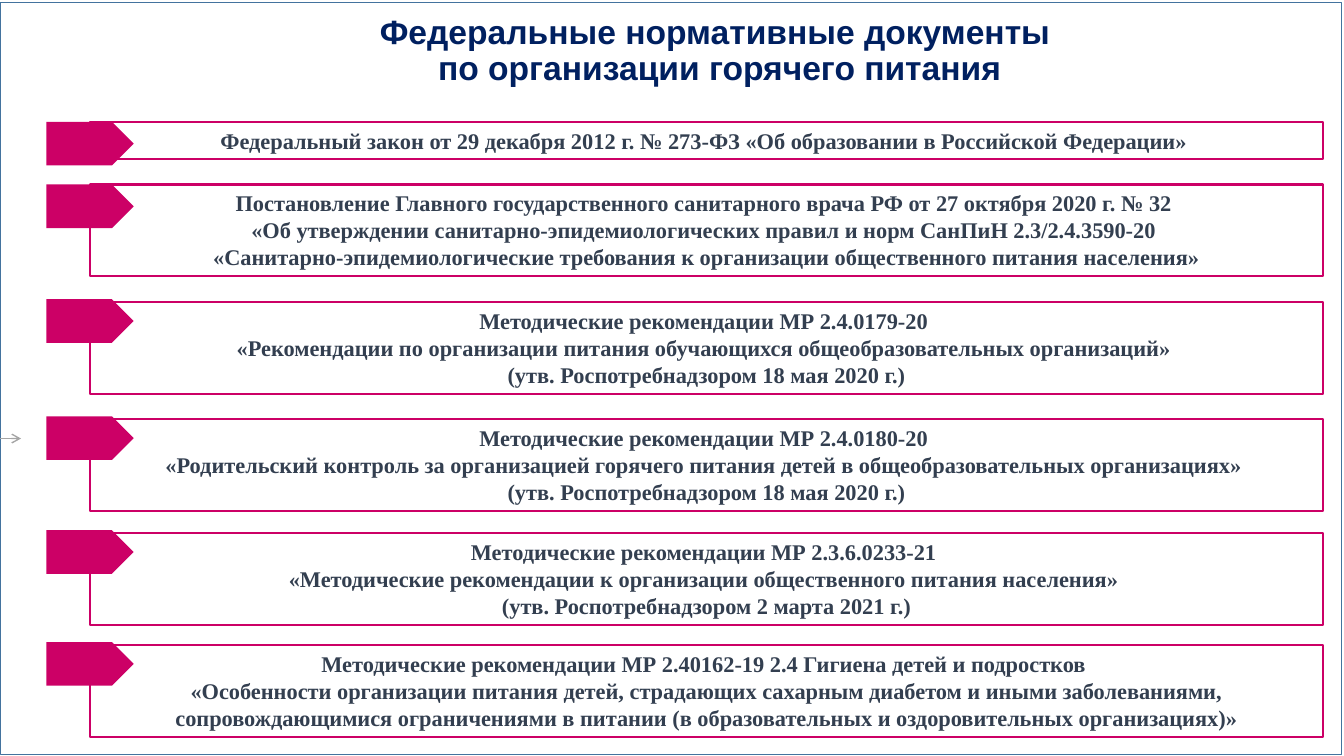
from lxml import etree
from pptx import Presentation
from pptx.dml.color import RGBColor
from pptx.enum import shapes, text
from pptx.oxml import ns
from pptx.util import Cm, Pt

COLORS = {
    "title": "002060",
    "accent": "CC0066",
    "body": "333F50",
    "frame": "43739E",
    "arrow": "A5A5A5",
}

DOCUMENTS = [
    (3.07, 0.94, 0, [
        "Федеральный закон от 29 декабря 2012 г. № 273-ФЗ «Об образовании в Российской Федерации» ",
    ]),
    (4.65, 2.31, 0, [
        "Постановление Главного государственного санитарного врача РФ от 27 октября 2020 г. № 32 ",
        "«Об утверждении санитарно-эпидемиологических правил и норм СанПиН 2.3/2.4.3590-20 ",
        "«Санитарно-эпидемиологические требования к организации общественного питания населения»",
    ]),
    (7.62, 2.31, 0.08, [
        "Методические рекомендации МР 2.4.0179-20 ",
        "«Рекомендации по организации питания обучающихся общеобразовательных организаций» ",
        "(утв. Роспотребнадзором 18 мая 2020 г.)",
    ]),
    (10.57, 2.31, 0.08, [
        "Методические рекомендации МР 2.4.0180-20 ",
        "«Родительский контроль за организацией горячего питания детей в общеобразовательных организациях» ",
        "(утв. Роспотребнадзором 18 мая 2020 г.)",
    ]),
    (13.44, 2.31, 0.08, [
        "Методические рекомендации МР 2.3.6.0233-21 ",
        "«Методические рекомендации к организации общественного питания населения» ",
        "(утв. Роспотребнадзором 2 марта 2021 г.)",
    ]),
    (16.26, 2.31, 0.08, [
        "Методические рекомендации МР 2.40162-19 2.4 Гигиена детей и подростков ",
        "«Особенности организации питания детей, страдающих сахарным диабетом и иными заболеваниями, "
        "сопровождающимися ограничениями в питании (в образовательных и оздоровительных организациях)»",
    ]),
]


def add_outline(slide, left, top, width, height, color, weight):
    shape = slide.shapes.add_shape(
        shapes.MSO_SHAPE.RECTANGLE, Cm(left), Cm(top), Cm(width), Cm(height))
    shape.shadow.inherit = False
    shape.fill.background()
    shape.line.color.rgb = RGBColor.from_string(COLORS[color])
    shape.line.width = Pt(weight)
    return shape


def format_paragraph(paragraph, font_name, size, color):
    paragraph.alignment = text.PP_ALIGN.CENTER
    paragraph.font.name = font_name
    paragraph.font.size = Pt(size)
    paragraph.font.bold = True
    paragraph.font.color.rgb = RGBColor.from_string(COLORS[color])


presentation = Presentation()
presentation.slide_width = Cm(33.87)
presentation.slide_height = Cm(19.05)
slide = presentation.slides.add_slide(presentation.slide_layouts[5])

add_outline(slide, 0, 0.05, 33.81, 18.95, "frame", 0.25)

title = slide.shapes.title
title.left, title.top, title.width, title.height = Cm(3.2), Cm(0.15), Cm(29.87), Cm(2.31)
title_frame = title.text_frame
title_frame.margin_left = title_frame.margin_right = Cm(0.1)
title_frame.margin_top = title_frame.margin_bottom = Cm(0.1)
title_frame.vertical_anchor = text.MSO_ANCHOR.MIDDLE
title_frame.word_wrap = True
title_frame.text = "Федеральные нормативные документы \vпо организации горячего питания"
title_paragraph = title_frame.paragraphs[0]
format_paragraph(title_paragraph, "Arial", 24, "title")
title_paragraph.line_spacing = 0.9

for top, height, tag_rise, lines in DOCUMENTS:
    box = add_outline(slide, 2.26, top, 31.09, height, "accent", 1.5)
    box.text_frame.word_wrap = True
    box.text_frame.auto_size = text.MSO_AUTO_SIZE.SHAPE_TO_FIT_TEXT
    box.text_frame.vertical_anchor = text.MSO_ANCHOR.TOP
    box.text_frame.text = "\n".join(lines)
    for paragraph in box.text_frame.paragraphs:
        format_paragraph(paragraph, "Times New Roman", 16, "body")

    tag = slide.shapes.add_shape(
        shapes.MSO_SHAPE.PENTAGON, Cm(1.17), Cm(top - tag_rise), Cm(2.2), Cm(1.1))
    tag.shadow.inherit = False
    tag.fill.solid()
    tag.fill.fore_color.rgb = RGBColor.from_string(COLORS["accent"])
    tag.line.fill.background()

arrow = slide.shapes.add_connector(
    shapes.MSO_CONNECTOR.STRAIGHT, Cm(0), Cm(11.05), Cm(0.53), Cm(11.05))
arrow.line.color.rgb = RGBColor.from_string(COLORS["arrow"])
arrow.line.width = Pt(1)
etree.SubElement(arrow.line._get_or_add_ln(), ns.qn("a:tailEnd"), type="arrow")
etree.SubElement(arrow._element.spPr, ns.qn("a:effectLst"))

presentation.save("out.pptx")
